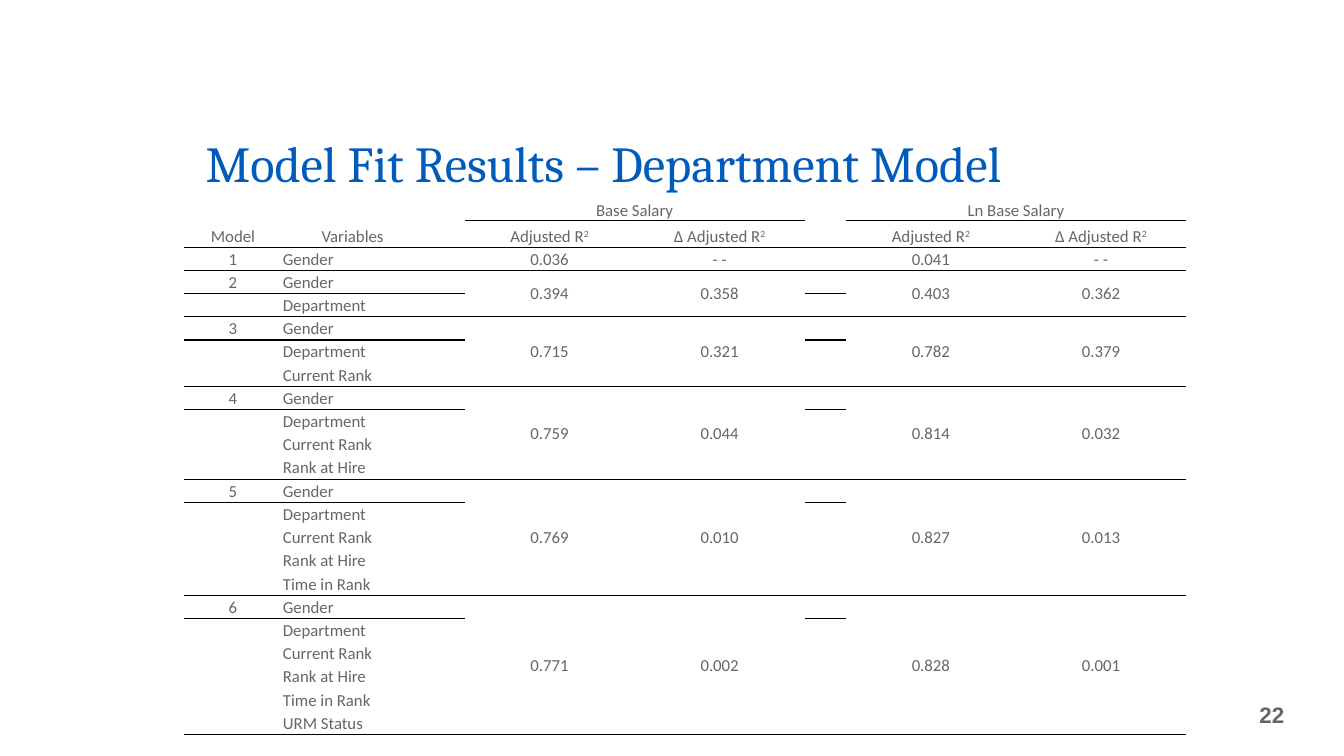
from lxml.etree import SubElement
from pptx import Presentation
from pptx.dml.color import RGBColor
from pptx.enum.text import MSO_ANCHOR, MSO_AUTO_SIZE, PP_ALIGN
from pptx.oxml.ns import qn
from pptx.util import Pt

COLORS = {"title": "005BBB", "text": "666666", "rule": "000000"}
VARIABLES = ["Gender", "Department", "Current Rank", "Rank at Hire", "Time in Rank", "URM Status"]
MODEL_FITS = [
    ["0.036", "- -", "0.041", "- -"],
    ["0.394", "0.358", "0.403", "0.362"],
    ["0.715", "0.321", "0.782", "0.379"],
    ["0.759", "0.044", "0.814", "0.032"],
    ["0.769", "0.010", "0.827", "0.013"],
    ["0.771", "0.002", "0.828", "0.001"],
]
VALUE_COLUMNS = [3, 4, 6, 7]
COLUMN_WIDTHS = [70, 101, 29.4, 121.5, 121.5, 29.4, 121.5, 121.5]
ROW_HEIGHTS = [16.6, 18.9] + [16.6] * 21


def write_text(frame, text, size=12, font="Calibri", color="text", bold=False,
               align=PP_ALIGN.CENTER, anchor=MSO_ANCHOR.MIDDLE, superscript=""):
    frame.vertical_anchor = anchor
    paragraph = frame.paragraphs[0]
    paragraph.alignment = align
    for part in filter(None, [text, superscript]):
        run = paragraph.add_run()
        run.text = part
        run.font.size = Pt(size)
        run.font.name = font
        run.font.bold = bold
        run.font.color.rgb = RGBColor.from_string(COLORS[color])
    if superscript:
        run.font._element.set("baseline", "30000")
    return paragraph


def add_rule(cell, side):
    line = SubElement(cell._tc.get_or_add_tcPr(), qn(f"a:{side}"), w=str(Pt(1)))
    fill = SubElement(line, qn("a:solidFill"))
    SubElement(fill, qn("a:srgbClr"), val=COLORS["rule"])


presentation = Presentation()
presentation.slide_width = Pt(960)
presentation.slide_height = Pt(540)
slide = presentation.slides.add_slide(presentation.slide_layouts[5])

title = slide.shapes.title
title.left, title.top, title.width, title.height = Pt(139.7), Pt(85), Pt(828), Pt(56.2)
title.text_frame.auto_size = MSO_AUTO_SIZE.NONE
title_paragraph = write_text(title.text_frame, "Model Fit Results – Department Model", size=36,
                             font="Cambria", color="title", align=PP_ALIGN.LEFT,
                             anchor=MSO_ANCHOR.BOTTOM)
title_paragraph.line_spacing = 0.8

number_box = slide.shapes.add_textbox(Pt(869.8), Pt(489.6), Pt(56.9), Pt(41.8))
number_frame = number_box.text_frame
number_frame.word_wrap = True
number_frame.margin_left = number_frame.margin_right = Pt(9.4)
write_text(number_frame, "22", size=16, font="Arial", bold=True, align=PP_ALIGN.RIGHT)

table_frame = slide.shapes.add_table(len(ROW_HEIGHTS), len(COLUMN_WIDTHS), Pt(131.4), Pt(141.1),
                                     Pt(sum(COLUMN_WIDTHS)), Pt(sum(ROW_HEIGHTS)))
table = table_frame.table
table.first_row = False
table.horz_banding = False
style = table._tbl.tblPr.find(qn("a:tableStyleId"))
style.text = "{2D5ABB26-0587-4C30-8999-92F81FD0307C}"
for column, width in zip(table.columns, COLUMN_WIDTHS):
    column.width = Pt(width)
for row, height in zip(table.rows, ROW_HEIGHTS):
    row.height = Pt(height)

for column, heading in [(3, "Base Salary"), (6, "Ln Base Salary")]:
    table.cell(0, column).merge(table.cell(0, column + 1))
    write_text(table.cell(0, column).text_frame, heading)
    for offset, label in enumerate(["Adjusted R", "Δ Adjusted R"]):
        write_text(table.cell(1, column + offset).text_frame, label, superscript="2")
for column, heading in enumerate(["Model", "Variables"]):
    write_text(table.cell(1, column).text_frame, heading)

top_rules = {(1, column) for column in VALUE_COLUMNS}
bottom_rules = {(0, column) for column in VALUE_COLUMNS}
bottom_rules |= {(1, column) for column in range(len(COLUMN_WIDTHS))}
first_row = 2
for model, fits in enumerate(MODEL_FITS, start=1):
    last_row = first_row + model - 1
    write_text(table.cell(first_row, 0).text_frame, str(model))
    for offset, variable in enumerate(VARIABLES[:model]):
        write_text(table.cell(first_row + offset, 1).text_frame, variable, align=PP_ALIGN.LEFT)
    for column, value in zip(VALUE_COLUMNS, fits):
        if model > 1:
            table.cell(first_row, column).merge(table.cell(last_row, column))
        write_text(table.cell(first_row, column).text_frame, value)
        bottom_rules.add((first_row, column))
    for column in range(len(COLUMN_WIDTHS)):
        top_rules.add((first_row, column))
        bottom_rules.add((last_row, column))
    first_row = last_row + 1

for row in range(len(ROW_HEIGHTS)):
    for column in range(len(COLUMN_WIDTHS)):
        cell = table.cell(row, column)
        cell.vertical_anchor = MSO_ANCHOR.BOTTOM if row < 2 else MSO_ANCHOR.MIDDLE
        cell.margin_left = cell.margin_right = cell.margin_top = Pt(0.7)
        cell.margin_bottom = 0
        if (row, column) in top_rules:
            add_rule(cell, "lnT")
        if (row, column) in bottom_rules:
            add_rule(cell, "lnB")
        cell.fill.background()
        if not cell.text_frame.text:
            SubElement(cell.text_frame.paragraphs[0]._p, qn("a:endParaRPr"), sz="1200")

presentation.save("out.pptx")
